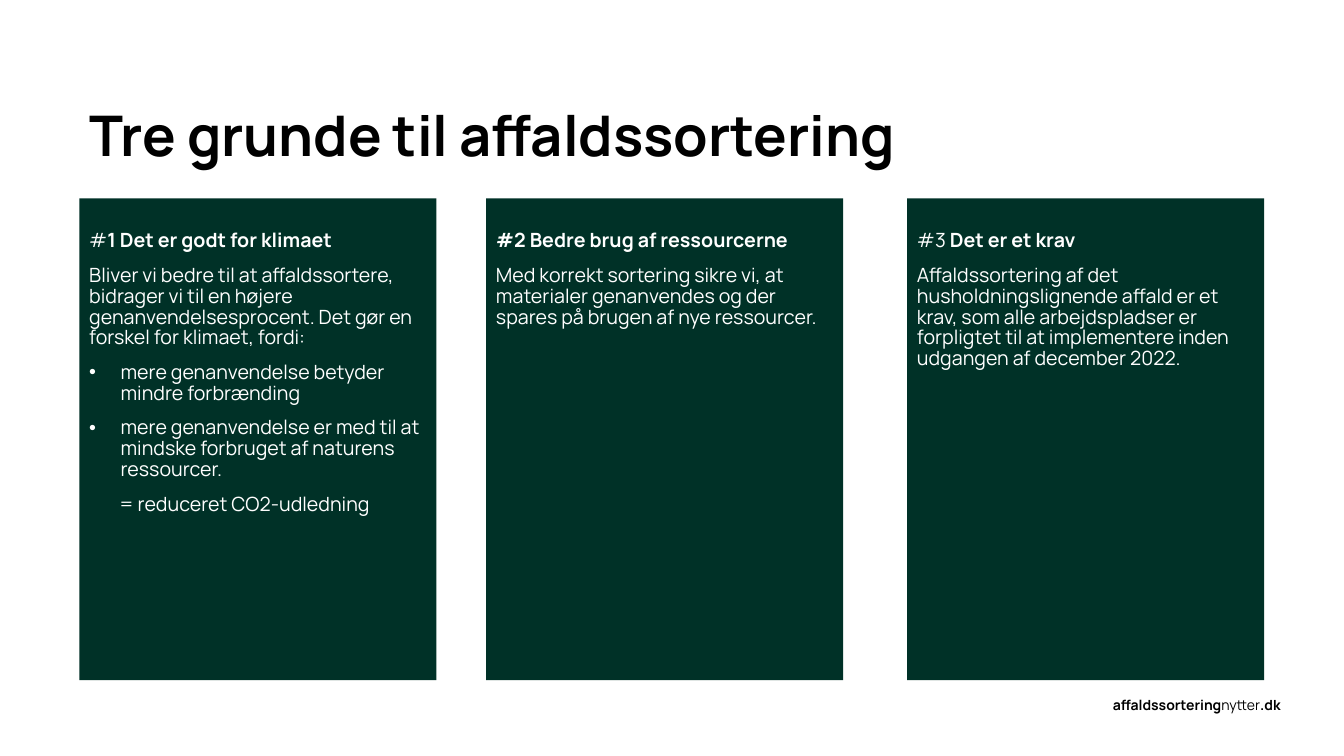
import pptx
import pptx.util
import pptx.dml.color
import pptx.enum.shapes
import pptx.enum.text
import lxml.etree

Cm, Pt = pptx.util.Cm, pptx.util.Pt
ALIGN = pptx.enum.text.PP_ALIGN
ANCHOR = pptx.enum.text.MSO_ANCHOR


def color(value):
    return pptx.dml.color.RGBColor.from_string(value)


def add_runs(paragraph, pieces, size, ink):
    for text, bold in pieces:
        run = paragraph.add_run()
        run.text = text
        for key, value in {"name": "Manrope", "size": Pt(size), "bold": bold}.items():
            setattr(run.font, key, value)
        run.font.color.rgb = color(ink)


deck = pptx.Presentation()
deck.slide_width, deck.slide_height = Cm(33.87), Cm(19.05)
slide = deck.slides.add_slide(deck.slide_layouts[5])

heading = slide.shapes.title
for key, value in {"left": Cm(2), "top": Cm(2.5), "width": Cm(29.95), "height": Cm(1.98)}.items():
    setattr(heading, key, value)
heading.text_frame.vertical_anchor = ANCHOR.MIDDLE
heading.text_frame.auto_size = pptx.enum.text.MSO_AUTO_SIZE.NONE
heading_line = heading.text_frame.paragraphs[0]
heading_line.alignment = ALIGN.LEFT
heading_line.line_spacing = 0.9
add_runs(heading_line, [("Tre grunde til affaldssortering", True)], 40, "000000")

reasons = [
    (2, [
        ("plain", [("#", False), ("1 Det er godt for klimaet", True)]),
        ("plain", [("Bliver vi bedre til at affaldssortere, bidrager vi til en højere "
                    "genanvendelsesprocent. Det gør en forskel for klimaet, fordi:", False)]),
        ("bullet", [("mere genanvendelse betyder mindre forbrænding", False)]),
        ("bullet", [("mere genanvendelse er med til at mindske forbruget af naturens "
                     "ressourcer.", False)]),
        ("result", [("= reduceret CO2-udledning", False)]),
    ]),
    (12.25, [
        ("plain", [("#2 Bedre brug af ressourcerne", True)]),
        ("plain", [("Med korrekt sortering sikre vi, at materialer genanvendes og der "
                    "spares på brugen af nye ressourcer.", False)]),
    ]),
    (22.86, [
        ("plain", [("#3 ", False), ("Det er et krav", True)]),
        ("plain", [("Affaldssortering af det husholdningslignende affald er et krav, som "
                    "alle arbejdspladser er forpligtet til at implementere inden udgangen "
                    "af december 2022.", False)]),
    ]),
]
indents = {"plain": (0, 0), "bullet": (0.79, -0.79), "result": (0, 0.75)}

for left, lines in reasons:
    panel = slide.shapes.add_shape(
        pptx.enum.shapes.MSO_SHAPE.RECTANGLE, Cm(left), Cm(5), Cm(9), Cm(12.14))
    panel.shadow.inherit = False
    panel.fill.solid()
    panel.fill.fore_color.rgb = color("003127")
    panel.line.fill.background()
    frame = panel.text_frame
    for key, value in {"word_wrap": True, "vertical_anchor": ANCHOR.TOP,
                       "margin_top": Cm(0.83)}.items():
        setattr(frame, key, value)
    for number, (style, pieces) in enumerate(lines):
        line = frame.add_paragraph() if number else frame.paragraphs[0]
        for key, value in {"alignment": ALIGN.LEFT, "line_spacing": 0.88,
                           "space_before": Pt(10 if number else 0)}.items():
            setattr(line, key, value)
        margin, indent = indents[style]
        properties = line._p.get_or_add_pPr()
        properties.set("marL", str(Cm(margin)))
        properties.set("indent", str(Cm(indent)))
        if style == "bullet":
            for tag, key, value in (("buFont", "typeface", "Arial"), ("buChar", "char", "•")):
                mark = lxml.etree.SubElement(properties, pptx.oxml.ns.qn("a:" + tag))
                mark.set(key, value)
        add_runs(line, pieces, 14, "FFFFFF")

address = slide.shapes.add_textbox(Cm(25.1), Cm(17.42), Cm(7.42), Cm(0.69))
address.text_frame.word_wrap = True
address_line = address.text_frame.paragraphs[0]
address_line.alignment = ALIGN.RIGHT
add_runs(address_line, [("affaldssortering", True), ("nytter", False), (".dk", True)], 10, "000000")

deck.save("out.pptx")
